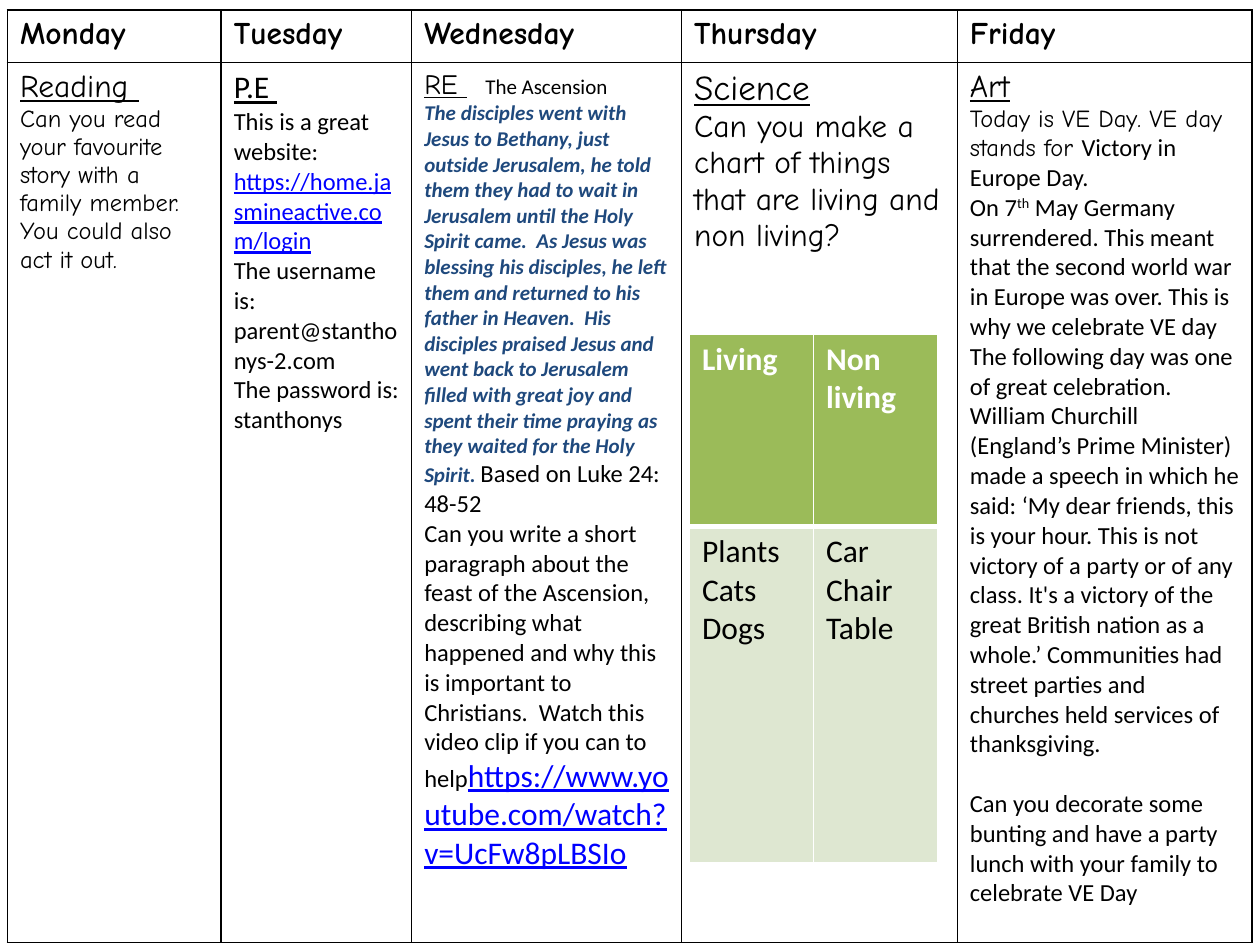
import pptx
import pptx.dml.color
import pptx.oxml
import pptx.oxml.ns
import pptx.util
from pptx.util import Cm

COMIC, PLAIN = "Comic Neue", "Calibri"
BLACK, WHITE, BLUE, NAVY = "000000", "FFFFFF", "0000FF", "1F497D"
GREEN, PALE_GREEN = "9BBB59", "DEE7D1"
NAMESPACE = pptx.oxml.ns.nsdecls("a")


def fill_cell(cell, paragraphs, fill, border, bottom_width=1):
    """Write paragraphs of (text, size, font, colour, styles) runs; styles are letters of b, i, u, s (superscript)."""
    properties = cell._tc.get_or_add_tcPr()
    for side, width in (("L", 1), ("R", 1), ("T", 1), ("B", bottom_width)):
        properties.append(pptx.oxml.parse_xml(
            f'<a:ln{side} {NAMESPACE} w="{width * 12700}"><a:solidFill>'
            f'<a:srgbClr val="{border}"/></a:solidFill></a:ln{side}>'))
    cell.fill.solid()
    cell.fill.fore_color.rgb = pptx.dml.color.RGBColor.from_string(fill)
    frame = cell.text_frame
    for index, runs in enumerate(paragraphs):
        paragraph = frame.add_paragraph() if index else frame.paragraphs[0]
        for text, size, font, colour, styles in runs:
            run = paragraph.add_run()
            run.text = text
            run.font.size = pptx.util.Pt(size)
            run.font.name = font
            run.font.color.rgb = pptx.dml.color.RGBColor.from_string(colour)
            run.font.bold = "b" in styles
            run.font.italic = "i" in styles
            run.font.underline = "u" in styles
            if "s" in styles:
                run.font._element.set("baseline", "30000")


def add_table(slide, left, top, widths, heights):
    table = slide.shapes.add_table(
        len(heights), len(widths), Cm(left), Cm(top), Cm(sum(widths)), Cm(sum(heights))).table
    table.first_row = table.horz_banding = False
    for column, width in zip(table.columns, widths):
        column.width = Cm(width)
    for row, height in zip(table.rows, heights):
        row.height = Cm(height)
    return table


presentation = pptx.Presentation()
presentation.slide_width, presentation.slide_height = Cm(25.4), Cm(19.05)
slide = presentation.slides.add_slide(presentation.slide_layouts[6])

reading = [
    [("Reading ", 18, COMIC, BLACK, "u")],
    [("Can you read your favourite story with a family member. You could also act it out.",
      14, COMIC, BLACK, "")],
]
exercise = [
    [("P.E ", 18, PLAIN, BLACK, "u")],
    [("This is a great website: ", 14, PLAIN, BLACK, ""),
     ("https://home.jasmineactive.com/login", 14, PLAIN, BLUE, "u")],
    [("The username is: parent@stanthonys-2.com", 14, PLAIN, BLACK, "")],
    [("The password is: stanthonys", 14, PLAIN, BLACK, "")],
]
ascension = [
    [("RE ", 16, COMIC, BLACK, "u"), ("\t", 16, COMIC, BLACK, ""),
     ("The Ascension", 12, PLAIN, BLACK, "")],
    [("The disciples went with Jesus to Bethany, just outside Jerusalem, he told them they had "
      "to wait in Jerusalem until the Holy Spirit came.  As Jesus was blessing his disciples, "
      "he left them and returned to his father in Heaven.  His disciples praised Jesus and went "
      "back to Jerusalem filled with great joy and spent their time praying as they waited for "
      "the Holy Spirit. ", 12, PLAIN, NAVY, "bi"),
     ("Based on Luke 24: 48-52", 14, PLAIN, BLACK, "")],
    [("Can you write a short paragraph about the feast of the Ascension, describing what happened "
      "and why this is important to Christians.  Watch this video clip if you can to help",
      14, PLAIN, BLACK, ""),
     ("https://www.youtube.com/watch?v=UcFw8pLBSIo", 18, PLAIN, BLUE, "u")],
]
science = [
    [("Science", 20, COMIC, BLACK, "u")],
    [("Can you make a chart of things that are living and non living?", 18, COMIC, BLACK, "")],
]
art = [
    [("Art", 18, COMIC, BLACK, "u")],
    [("Today is VE Day. VE day stands for ", 14, COMIC, BLACK, ""),
     ("Victory in Europe Day.", 14, PLAIN, BLACK, "")],
    [("On 7", 14, PLAIN, BLACK, ""), ("th", 14, PLAIN, BLACK, "s"),
     (" May Germany surrendered. This meant that the second world war in Europe was over. This is "
      "why we celebrate VE day The following day was one of great celebration. William Churchill "
      "(England’s Prime Minister) made a speech in which he said: ‘My dear friends, this is your "
      "hour. This is not victory of a party or of any class. It's a victory of the great British "
      "nation as a whole.’ Communities had street parties and churches held services of "
      "thanksgiving.", 14, PLAIN, BLACK, "")],
    [("Can you decorate some bunting and have a party lunch with your family to celebrate VE Day",
      14, PLAIN, BLACK, "")],
]
week = {"Monday": reading, "Tuesday": exercise, "Wednesday": ascension,
        "Thursday": science, "Friday": art}

timetable = add_table(slide, 0.15, 0.2, [4.31, 3.84, 5.44, 5.56, 5.94], [1.06, 17.74])
for column, (day, activity) in enumerate(week.items()):
    fill_cell(timetable.cell(0, column), [[(day, 18, COMIC, BLACK, "b")]], WHITE, BLACK)
    fill_cell(timetable.cell(1, column), activity, WHITE, BLACK)

# The Ascension title sits on a tab stop; the bunting task stands one line apart.
heading = timetable.cell(1, 2).text_frame.paragraphs[0]
heading._p.get_or_add_pPr().append(pptx.oxml.parse_xml(
    f'<a:tabLst {NAMESPACE}><a:tab pos="{Cm(1.23)}" algn="l"/></a:tabLst>'))
timetable.cell(1, 4).text_frame.paragraphs[-1].space_before = pptx.util.Pt(17)

examples = {"Living": ["Plants", "Cats", "Dogs"], "Non living": ["Car", "Chair", "Table"]}
chart_table = add_table(slide, 13.9, 6.73, [2.5, 2.5], [3.88, 6.78])
for column, (group, things) in enumerate(examples.items()):
    fill_cell(chart_table.cell(0, column), [[(group, 18, PLAIN, WHITE, "b")]],
              GREEN, WHITE, bottom_width=3)
    fill_cell(chart_table.cell(1, column),
              [[(thing, 18, PLAIN, BLACK, "")] for thing in things], PALE_GREEN, WHITE)

presentation.save("out.pptx")
